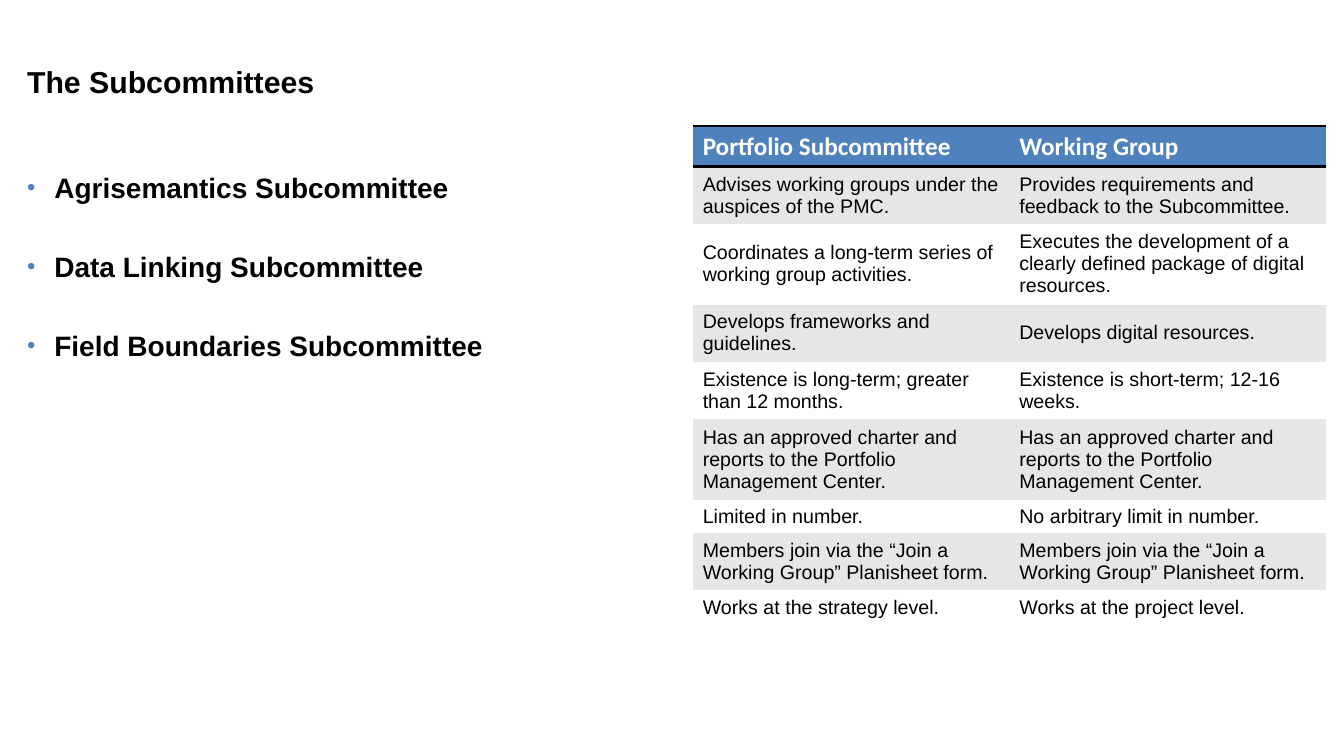
from lxml import etree
from pptx import Presentation
from pptx import util as u
from pptx.dml.color import RGBColor
from pptx.enum import text
from pptx.oxml import ns

BLACK = RGBColor(0x00, 0x00, 0x00)
WHITE = RGBColor(0xFF, 0xFF, 0xFF)
BLUE = RGBColor(0x4F, 0x81, 0xBD)
GREY = RGBColor(0xE6, 0xE6, 0xE6)
NO_GRID = "{2D5ABB26-0587-4C30-8999-92F81FD0307C}"

SUBCOMMITTEES = [
    "Agrisemantics Subcommittee",
    "Data Linking Subcommittee",
    "Field Boundaries Subcommittee",
]
CHARTER = "Has an approved charter and reports to the Portfolio Management Center."
JOIN = "Members join via the “Join a Working Group” Planisheet form."
COMPARISON = [
    ("Portfolio Subcommittee", "Working Group"),
    ("Advises working groups under the auspices of the PMC.",
     "Provides requirements and feedback to the Subcommittee."),
    ("Coordinates a long-term series of working group activities.",
     "Executes the development of a clearly defined package of digital resources."),
    ("Develops frameworks and guidelines.", "Develops digital resources."),
    ("Existence is long-term; greater than 12 months.",
     "Existence is short-term; 12-16 weeks."),
    (CHARTER, CHARTER),
    ("Limited in number.", "No arbitrary limit in number."),
    (JOIN, JOIN),
    ("Works at the strategy level.", "Works at the project level."),
]


class Deck:
    """Hold the style and current slide; place elements by column and share of height."""

    margin, column, gutter = 0.17, 6.28, 0.42

    def __init__(self):
        self.prs = Presentation()
        self.prs.slide_width, self.prs.slide_height = u.Inches(13.33), u.Inches(7.5)
        self.s = self.prs.slides.add_slide(self.prs.slide_layouts[6])

    def box(self, col, top, cols, height):
        x = self.margin + col * (self.column + self.gutter)
        h = self.prs.slide_height
        return u.Inches(x), int(top * h), u.Inches(cols * self.column), int(height * h)

    def style(self, p, size, color=BLACK, bold=True, font="Arial"):
        for r in p.runs:
            r.font.name, r.font.size, r.font.bold = font, u.Pt(size), bold
            r.font.color.rgb = color

    def text_box(self, box):
        tf = self.s.shapes.add_textbox(*box).text_frame
        tf.word_wrap = True
        return tf

    def title(self, words, box):
        tf = self.text_box(box)
        tf.vertical_anchor = text.MSO_ANCHOR.MIDDLE
        tf.text = words
        self.style(tf.paragraphs[0], 21.6)

    def bullets(self, items, box):
        tf = self.text_box(box)
        tf.margin_top = u.Inches(0.44)
        for i, item in enumerate(items):
            p = tf.add_paragraph() if i else tf.paragraphs[0]
            p.text = item
            p.space_before = u.Pt(32.3 if i else 0)
            self.style(p, 20)
            pPr = p._p.get_or_add_pPr()
            pPr.set("marL", str(u.Inches(0.27)))
            pPr.set("indent", str(-u.Inches(0.27)))
            color = etree.SubElement(pPr, ns.qn("a:buClr"))
            etree.SubElement(color, ns.qn("a:srgbClr"), val=str(BLUE))
            etree.SubElement(pPr, ns.qn("a:buSzPct"), val="85000")
            etree.SubElement(pPr, ns.qn("a:buFont"), typeface="Arial")
            etree.SubElement(pPr, ns.qn("a:buChar"), char="•")

    def rule(self, cell):
        tcPr = cell._tc.get_or_add_tcPr()
        for i, side in enumerate(("a:lnT", "a:lnB")):
            ln = etree.Element(ns.qn(side), w=str(u.Pt(2)))
            fill = etree.SubElement(ln, ns.qn("a:solidFill"))
            etree.SubElement(fill, ns.qn("a:srgbClr"), val=str(BLACK))
            tcPr.insert(i, ln)

    def table(self, rows, box):
        frame = self.s.shapes.add_table(len(rows), 2, *box)
        tbl = frame.table
        tbl.horz_banding = False
        tbl._tbl.tblPr.find(ns.qn("a:tableStyleId")).text = NO_GRID
        for i, words in enumerate(rows):
            tbl.rows[i].height = u.Inches(0.1)
            for j, word in enumerate(words):
                cell = tbl.cell(i, j)
                cell.text = word
                cell.vertical_anchor = text.MSO_ANCHOR.MIDDLE
                cell.fill.solid()
                p = cell.text_frame.paragraphs[0]
                if i == 0:
                    cell.fill.fore_color.rgb = BLUE
                    self.style(p, 18, WHITE, font="Calibri")
                    self.rule(cell)
                else:
                    cell.fill.fore_color.rgb = GREY if i % 2 else WHITE
                    self.style(p, 14, bold=False)
        frame.height = box[3]


def main():
    deck = Deck()
    deck.bullets(SUBCOMMITTEES, deck.box(0, 0.167, 1, 0.76))
    deck.table(COMPARISON, deck.box(1, 0.167, 1, 0.66))
    deck.title("The Subcommittees", deck.box(0, 0.076, 1.7, 0.064))
    deck.prs.save("out.pptx")


if __name__ == "__main__":
    main()
